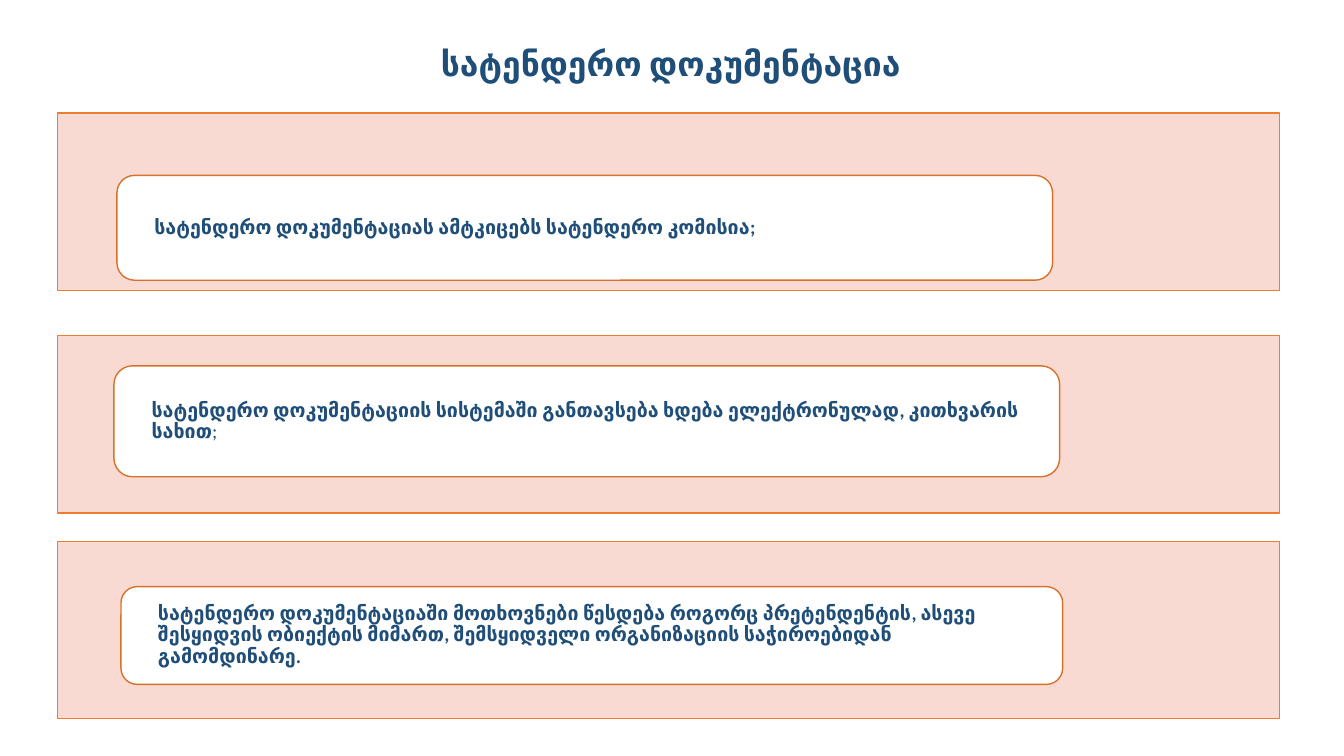
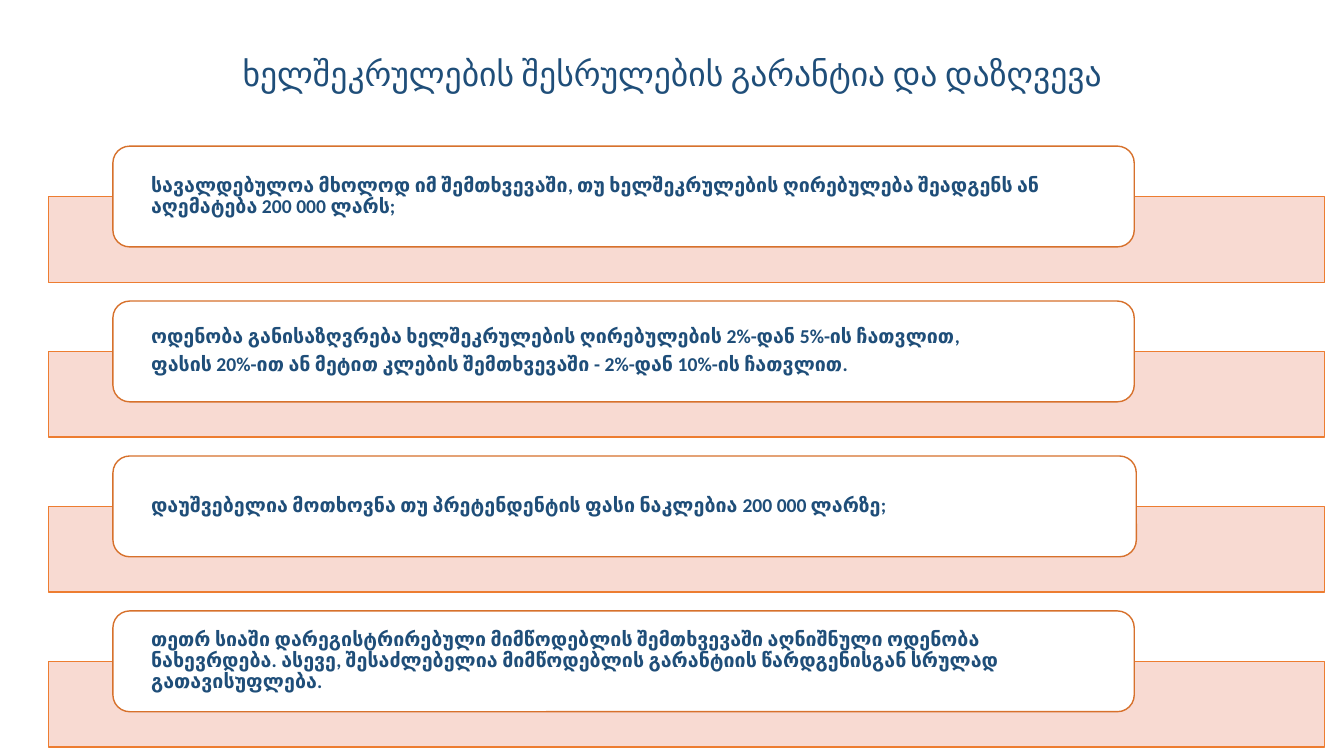
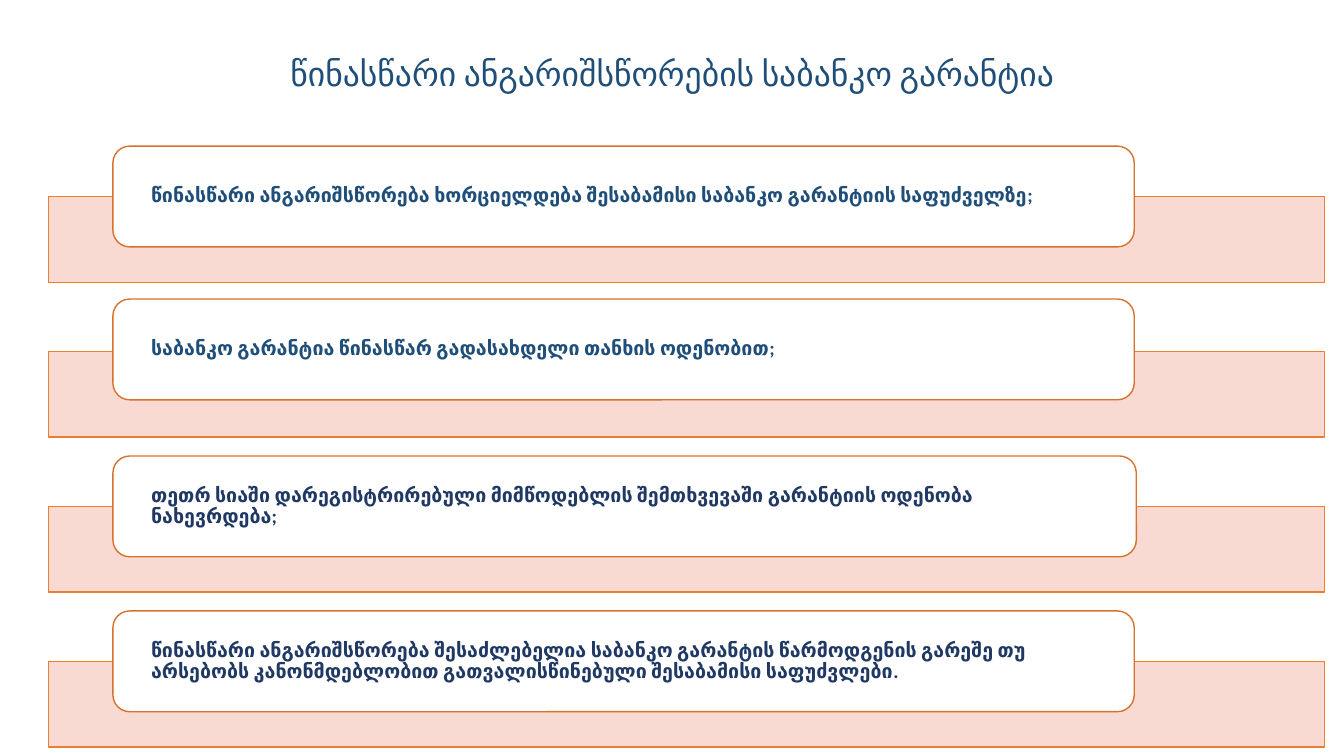
from pptx import Presentation
from pptx.dml.color import RGBColor
from pptx.enum.shapes import MSO_SHAPE as Shape
from pptx.enum.text import MSO_ANCHOR as Anchor, MSO_AUTO_SIZE as Fit, PP_ALIGN as Align
from pptx.oxml.ns import qn
from pptx.util import Inches, Pt
from lxml.etree import SubElement

NAVY = RGBColor(0x1F, 0x4E, 0x79)
DEEP = RGBColor(0x20, 0x38, 0x64)
PEACH = RGBColor(0xF8, 0xD7, 0xCE)
ORANGE = RGBColor(0xED, 0x7D, 0x31)
RUST = RGBColor(0xD7, 0x71, 0x2C)
WHITE = RGBColor(0xFF, 0xFF, 0xFF)

FACE = "Calibri"
TITLE = {"name": FACE, "size": Pt(24)}
BODY = {"name": FACE, "size": Pt(14)}
FLAT = (0.48, 12.66, 0.85)  # left, width and height of a band in a stack


def style(font, color, looks):
    for key, value in looks.items():
        setattr(font, key, value)
    font.color.rgb = color


def add_title(prs, text, box, bold):
    slide = prs.slides.add_slide(prs.slide_layouts[5])
    title = slide.shapes.title
    title.left, title.top, title.width, title.height = map(Inches, box)
    frame = title.text_frame
    frame.text = text
    frame.word_wrap = True
    frame.auto_size = Fit.NONE
    frame.vertical_anchor = Anchor.MIDDLE
    para = frame.paragraphs[0]
    para.alignment = Align.CENTER
    para.line_spacing = 0.9
    style(para.runs[0].font, NAVY, {**TITLE, "bold": bold})
    return slide


def add_box(slide, kind, box, fill, line):
    shape = slide.shapes.add_shape(kind, *map(Inches, box))
    shape.shadow.inherit = False
    shape.fill.solid()
    shape.fill.fore_color.rgb = fill
    shape.line.color.rgb = line
    shape.line.width = Pt(1)
    return shape


def add_band(slide, box):
    band = add_box(slide, Shape.RECTANGLE, box, PEACH, ORANGE)
    color = band.fill._xPr.find(qn("a:solidFill"))[0]
    SubElement(color, qn("a:alpha"), val="90000")


def add_card(slide, box, text, pad, color=NAVY):
    """Lines are split at line ends; what follows a bar is not bold."""
    card = add_box(slide, Shape.ROUNDED_RECTANGLE, box, WHITE, RUST)
    frame = card.text_frame
    frame.word_wrap = True
    frame.vertical_anchor = Anchor.MIDDLE
    frame.margin_left = frame.margin_right = Inches(pad)
    frame.margin_top = frame.margin_bottom = 0
    for i, line in enumerate(text.split("\n")):
        para = frame.add_paragraph() if i else frame.paragraphs[0]
        para.alignment = Align.LEFT
        para.line_spacing = 0.9
        para.space_after = Pt(5)
        for j, part in enumerate(line.split("|")):
            run = para.add_run()
            run.text = part
            style(run.font, color, {**BODY, "bold": j == 0})


def build_papers(prs, title, rows):
    """Tall bands, each with its card inside."""
    slide = add_title(prs, title, (0.95, 0.4, 11.41, 0.5), True)
    left, wide, tall = 0.57, 12.12, 1.76
    for top, (dx, dy, w, h), text in rows:
        add_band(slide, (left, top, wide, tall))
        add_card(slide, (left + dx, top + dy, w, h), text, 0.32)


def build_stack(prs, title, rows):
    """Four flat bands at an equal pitch, each with a card over its top edge."""
    slide = add_title(prs, title, (0.92, 0.45, 11.5, 0.6), False)
    left, wide, tall = FLAT
    for i, (text, color, rise) in enumerate(rows):
        top = 1.95 + 1.537 * i
        add_band(slide, (left, top, wide, tall))
        span = 10.15 if i == 2 else 10.13
        add_card(slide, (left + 0.64, top - rise, span, 1), text, 0.33, color)


PAPERS = [
    (1.12, (0.59, 0.62, 9.28, 1.04),
     "სატენდერო დოკუმენტაციას ამტკიცებს სატენდერო კომისია;"),
    (3.33, (0.56, 0.3, 9.38, 1.1),
     "სატენდერო დოკუმენტაციის სისტემაში განთავსება ხდება ელექტრონულად, "
     "კითხვარის სახით|;"),
    (5.37, (0.63, 0.45, 9.34, 0.97),
     "სატენდერო დოკუმენტაციაში მოთხოვნები წესდება როგორც პრეტენდენტის, ასევე "
     "შესყიდვის ობიექტის მიმართ, შემსყიდველი ორგანიზაციის საჭიროებიდან "
     "გამომდინარე."),
]

BOND = [
    ("სავალდებულოა მხოლოდ იმ შემთხვევაში, თუ ხელშეკრულების ღირებულება "
     "შეადგენს ან აღემატება 200 000 ლარს;", NAVY, 0.5),
    ("ოდენობა განისაზღვრება ხელშეკრულების ღირებულების 2%-დან 5%-ის ჩათვლით,\n"
     "ფასის 20%-ით ან მეტით კლების შემთხვევაში - 2%-დან 10%-ის ჩათვლით.",
     NAVY, 0.5),
    ("დაუშვებელია მოთხოვნა თუ პრეტენდენტის ფასი ნაკლებია 200 000 ლარზე;",
     NAVY, 0.5),
    ("თეთრ სიაში დარეგისტრირებული მიმწოდებლის შემთხვევაში აღნიშნული ოდენობა "
     "ნახევრდება. ასევე, შესაძლებელია მიმწოდებლის გარანტიის წარდგენისგან "
     "სრულად გათავისუფლება.", NAVY, 0.5),
]

ADVANCE = [
    ("წინასწარი ანგარიშსწორება ხორციელდება შესაბამისი საბანკო გარანტიის "
     "საფუძველზე;", NAVY, 0.5),
    ("საბანკო გარანტია წინასწარ გადასახდელი თანხის ოდენობით;", NAVY, 0.52),
    ("თეთრ სიაში დარეგისტრირებული მიმწოდებლის შემთხვევაში გარანტიის ოდენობა "
     "ნახევრდება;", DEEP, 0.5),
    ("წინასწარი ანგარიშსწორება შესაძლებელია საბანკო გარანტის წარმოდგენის "
     "გარეშე თუ არსებობს კანონმდებლობით გათვალისწინებული შესაბამისი "
     "საფუძვლები.", DEEP, 0.5),
]


def main():
    prs = Presentation()
    prs.slide_width, prs.slide_height = Inches(13.33), Inches(7.5)
    build_papers(prs, "სატენდერო დოკუმენტაცია", PAPERS)
    build_stack(prs, "ხელშეკრულების შესრულების გარანტია და დაზღვევა", BOND)
    build_stack(prs, "წინასწარი ანგარიშსწორების საბანკო გარანტია", ADVANCE)
    prs.save("out.pptx")


if __name__ == "__main__":
    main()
